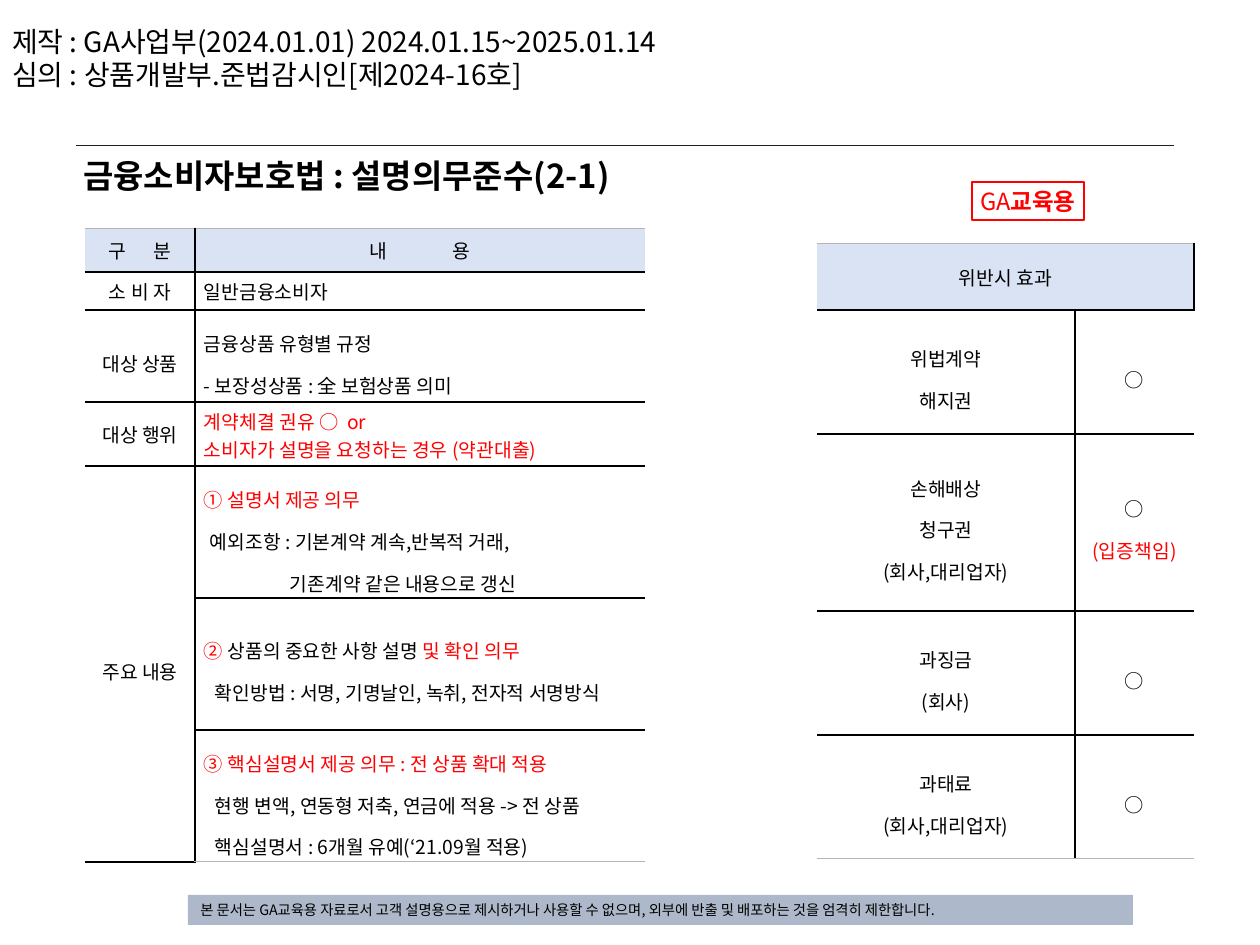
from collections import namedtuple

from pptx import Presentation, util as u
from pptx.dml.color import RGBColor
from pptx.enum import shapes, text
from pptx.oxml.ns import qn
from lxml import etree

PX = 914400 / 126
FONT = "Noto Sans CJK KR"
BLACK = RGBColor(0x00, 0x00, 0x00)
WHITE = RGBColor(0xFF, 0xFF, 0xFF)
RED = RGBColor(0xFF, 0x00, 0x00)
RULE = RGBColor(0x21, 0x21, 0x21)
EDGE = RGBColor(0xB4, 0xB4, 0xB4)
HEADER = RGBColor(0xDA, 0xE3, 0xF3)
FOOTER = RGBColor(0xAD, 0xB9, 0xCA)
LEFT, CENTER = text.PP_ALIGN.LEFT, text.PP_ALIGN.CENTER
MIDDLE, TOP, BOTTOM = text.MSO_ANCHOR.MIDDLE, text.MSO_ANCHOR.TOP, text.MSO_ANCHOR.BOTTOM

Run = namedtuple("Run", "text color bold gap", defaults=(BLACK, False, 0))
Line = namedtuple("Line", "runs indent", defaults=(0,))


def line(*runs, indent=0):
    return Line([run if isinstance(run, Run) else Run(run) for run in runs], indent)


def red(words, bold=False):
    return Run(words, RED, bold)


def spread(first, last, gap):
    """Two syllables with a space widened by gap points between them."""
    return line(first, Run(" ", gap=gap), last)


CREDITS = [line("제작 : GA사업부(2024.01.01) 2024.01.15~2025.01.14"),
           line("심의 : 상품개발부.준법감시인[제2024-16호]")]
TITLE = [line(Run("금융소비자보호법 : 설명의무준수(2-1)", bold=True))]
BADGE = [line(red("GA"), red("교육용", bold=True))]
NOTICE = [line("본 문서는 GA교육용 자료로서 고객 설명용으로 제시하거나 사용할 수 없으며, "
               "외부에 반출 및 배포하는 것을 엄격히 제한합니다.")]

# Each row: height, line spacing, cells (None continues a merged cell)
DUTY_COLUMNS = [110, 450]
DUTY_ROWS = [
    (44, 1, [[spread("구", "분", 13)], [spread("내", "용", 35)]]),
    (38, 1, [[line("소 비 자")], [line("일반금융소비자")]]),
    (92, 1.5, [[line("대상 상품")],
               [line("금융상품 유형별 규정"), line("- 보장성상품 : 全 보험상품 의미")]]),
    (64, 1, [[line("대상 행위")],
             [line(red("계약체결 권유 ○  or")),
              line(red("소비자가 설명을 요청하는 경우 (약관대출)"))]]),
    (132, 1.5, [[line("주요 내용")],
                [line(red("① 설명서 제공 의무")),
                 line("예외조항 : 기본계약 계속,반복적 거래,", indent=6),
                 line("기존계약 같은 내용으로 갱신", indent=86)]]),
    (132, 1.5, [None,
                [line(red("②"), " 상품의 중요한 사항 설명 ", red("및 확인 의무")),
                 line("확인방법 : 서명, 기명날인, 녹취, 전자적 서명방식", indent=11)]]),
    (132, 1.5, [None,
                [line(red("③ 핵심설명서 제공 의무 : 전 상품 확대 적용")),
                 line("현행 변액, 연동형 저축, 연금에 적용 -> 전 상품", indent=11),
                 line("핵심설명서 : 6개월 유예(‘21.09월 적용)", indent=11)]]),
]
EFFECT_COLUMNS = [258, 119]
EFFECT_ROWS = [
    (67, 1, [[line("위반시 효과")], None]),
    (124, 1.5, [[line("위법계약"), line("해지권")], [line("○")]]),
    (177, 1.5, [[line("손해배상"), line("청구권"), line("(회사,대리업자)")],
                [line("○"), line(red("(입증책임)"))]]),
    (124, 1.5, [[line("과징금"), line("(회사)")], [line("○")]]),
    (124, 1.5, [[line("과태료"), line("(회사,대리업자)")], [line("○")]]),
]


def px(length):
    return u.Emu(round(length * PX))


def write_text(frame, lines, size, align=LEFT, spacing=1):
    for index, item in enumerate(lines):
        paragraph = frame.paragraphs[0] if index == 0 else frame.add_paragraph()
        paragraph.alignment = align
        paragraph.line_spacing = spacing
        if item.indent:
            properties = paragraph._p.get_or_add_pPr()
            properties.set("marL", "0")
            properties.set("indent", str(px(item.indent)))
        for part in item.runs:
            run = paragraph.add_run()
            run.text = part.text
            run.font.size = u.Pt(size)
            run.font.bold = part.bold
            run.font.name = FONT
            run.font.color.rgb = part.color
            etree.SubElement(run._r.rPr, qn("a:ea")).set("typeface", FONT)
            if part.gap:
                run._r.rPr.set("spc", str(part.gap * 100))


def add_text(slide, box, lines, size, anchor=TOP, spacing=1):
    shape = slide.shapes.add_textbox(*map(px, box))
    shape.text_frame.word_wrap = True
    shape.text_frame.vertical_anchor = anchor
    write_text(shape.text_frame, lines, size, spacing=spacing)


def add_box(slide, box, fill, lines, size, align=LEFT, outline=None):
    shape = slide.shapes.add_shape(shapes.MSO_SHAPE.RECTANGLE, *map(px, box))
    shape.shadow.inherit = False
    shape.fill.solid()
    shape.fill.fore_color.rgb = fill
    if outline is None:
        shape.line.fill.background()
    else:
        shape.line.color.rgb = outline
        shape.line.width = u.Pt(1)
        shape.text_frame.margin_left = shape.text_frame.margin_right = 0
    shape.text_frame.word_wrap = True
    shape.text_frame.vertical_anchor = MIDDLE
    write_text(shape.text_frame, lines, size, align)


def add_rule(slide, left, right, y):
    rule = slide.shapes.add_connector(
        shapes.MSO_CONNECTOR.STRAIGHT, px(left), px(y), px(right), px(y))
    rule.line.color.rgb = RULE
    rule.line.width = u.Pt(0.5)
    etree.SubElement(rule._element.spPr, qn("a:effectLst"))


def set_border(cell, side, color, width):
    """Draw one side (L, R, T or B) of a cell; a colour of None hides it."""
    border = etree.SubElement(cell._tc.get_or_add_tcPr(), qn("a:ln" + side))
    border.set("w", str(u.Pt(width)))
    if color is None:
        etree.SubElement(border, qn("a:noFill"))
    else:
        fill = etree.SubElement(border, qn("a:solidFill"))
        etree.SubElement(fill, qn("a:srgbClr")).set("val", str(color))


def add_table(slide, left, top, columns, rows, merge, aligns):
    """Build a table with black inner lines and grey top and bottom edges."""
    height = sum(row[0] for row in rows)
    table = slide.shapes.add_table(
        len(rows), len(columns), px(left), px(top), px(sum(columns)), px(height)).table
    table.first_row = table.horz_banding = False
    for column, width in zip(table.columns, columns):
        column.width = px(width)
    first, last = merge
    table.cell(*first).merge(table.cell(*last))

    for r, (row_height, spacing, cells) in enumerate(rows):
        table.rows[r].height = px(row_height)
        for c, lines in enumerate(cells):
            cell = table.cell(r, c)
            cell.margin_left = cell.margin_right = px(9)
            cell.margin_top = cell.margin_bottom = px(5)
            cell.vertical_anchor = MIDDLE
            outer = {"L": c == 0, "R": c == len(columns) - 1,
                     "T": r == 0, "B": r == len(rows) - 1}
            for side, is_outer in outer.items():
                if not is_outer:
                    set_border(cell, side, BLACK, 1)
                else:
                    set_border(cell, side, EDGE if side in "TB" else None, 0.5)
            if r == 0:
                cell.fill.solid()
                cell.fill.fore_color.rgb = HEADER
            else:
                cell.fill.background()
            if lines:
                write_text(cell.text_frame, lines, 11,
                           CENTER if r == 0 else aligns[c], spacing)


def main():
    presentation = Presentation()
    presentation.slide_width, presentation.slide_height = px(1260), px(945)
    slide = presentation.slides.add_slide(presentation.slide_layouts[6])
    slide.background.fill.solid()
    slide.background.fill.fore_color.rgb = WHITE

    add_rule(slide, 76, 1174, 145)
    add_box(slide, (972, 182, 112, 38), WHITE, BADGE, 13.5, CENTER, RED)
    add_box(slide, (188, 895, 945, 30), FOOTER, NOTICE, 8.2)
    add_text(slide, (71, 106, 756, 96), TITLE, 18.8, BOTTOM, 0.9)
    add_table(slide, 85, 228, DUTY_COLUMNS, DUTY_ROWS, ((4, 0), (6, 0)), (CENTER, LEFT))
    add_table(slide, 817, 243, EFFECT_COLUMNS, EFFECT_ROWS, ((0, 0), (0, 1)), (CENTER, CENTER))
    add_text(slide, (0, 18, 755, 81), CREDITS, 16)
    presentation.save("out.pptx")


if __name__ == "__main__":
    main()
